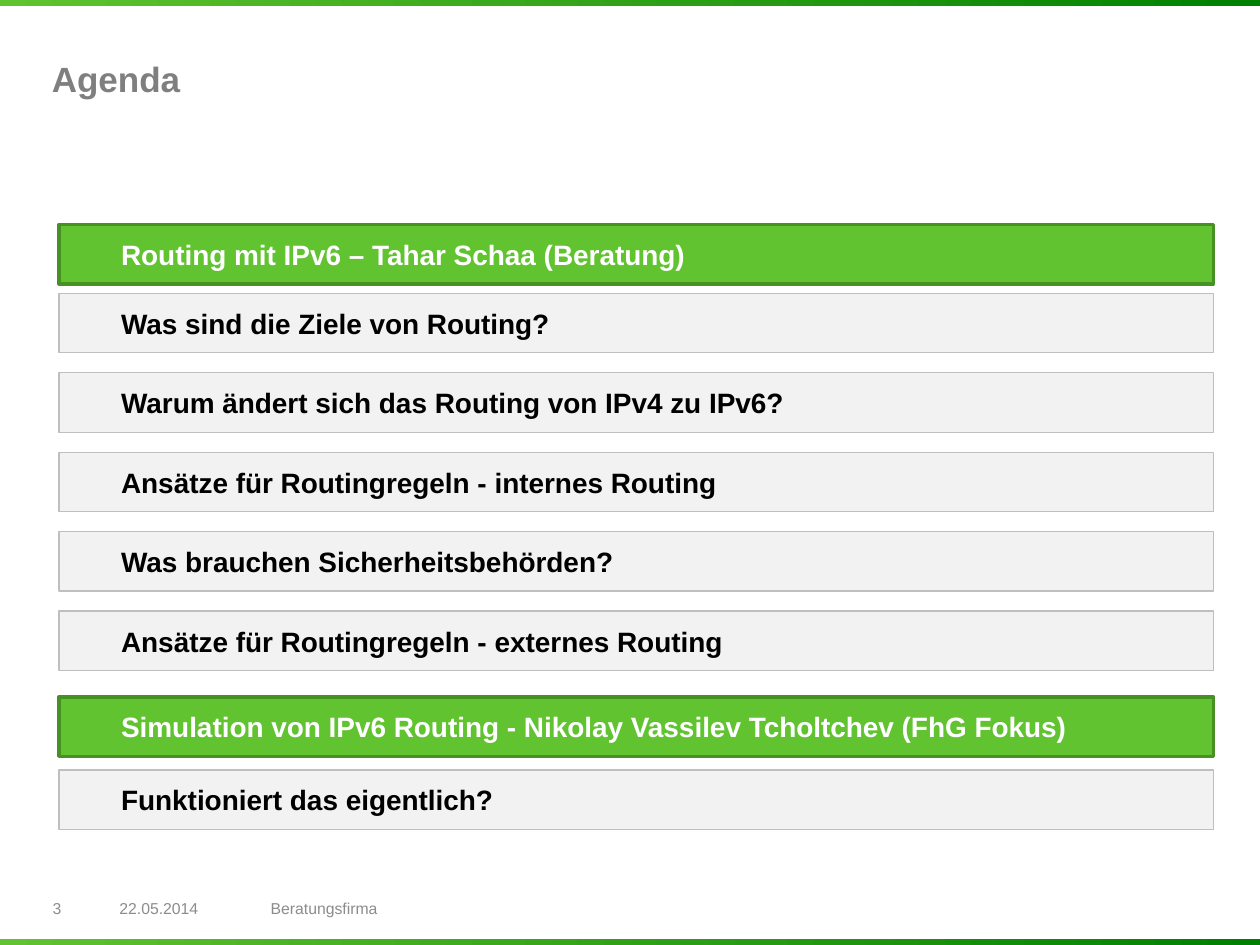
from pptx import Presentation
from pptx.dml.color import RGBColor
from pptx.enum.shapes import MSO_SHAPE
from pptx.enum.text import MSO_ANCHOR, MSO_AUTO_SIZE, PP_ALIGN
from pptx.util import Pt

RECTANGLE = MSO_SHAPE.RECTANGLE
TOP, MIDDLE = MSO_ANCHOR.TOP, MSO_ANCHOR.MIDDLE
LEFT = PP_ALIGN.LEFT
NO_AUTOFIT = MSO_AUTO_SIZE.NONE

GREEN = RGBColor(0x60, 0xC3, 0x2F)
DARK_GREEN = RGBColor(0x00, 0x80, 0x00)
EDGE_GREEN = RGBColor(0x47, 0x90, 0x23)
PALE_GREY = RGBColor(0xF2, 0xF2, 0xF2)
EDGE_GREY = RGBColor(0xBF, 0xBF, 0xBF)
TITLE_GREY = RGBColor(0x7F, 0x7F, 0x7F)
FOOTER_GREY = RGBColor(0x8C, 0x8C, 0x8C)
BLACK = RGBColor(0x00, 0x00, 0x00)
WHITE = RGBColor(0xFF, 0xFF, 0xFF)

FONT = "Arial"
SLIDE_WIDTH, SLIDE_HEIGHT = 720, 540
BAND_HEIGHT = 3.6

TITLE = "Agenda"
SECTIONS = [
    (128.2, "Routing mit IPv6 – Tahar Schaa (Beratung)", 167.6, [
        "Was sind die Ziele von Routing?",
        "Warum ändert sich das Routing von IPv4 zu IPv6?",
        "Ansätze für Routingregeln - internes Routing",
        "Was brauchen Sicherheitsbehörden?",
        "Ansätze für Routingregeln - externes Routing",
    ]),
    (398.2, "Simulation von IPv6 Routing - Nikolay Vassilev Tcholtchev (FhG Fokus)", 440, [
        "Funktioniert das eigentlich?",
    ]),
]
FOOTER = [
    (23, 38, "3"),
    (61.2, 86, "22.05.2014"),
    (147.6, 352, "Beratungsfirma"),
]

BAR_LEFT, BAR_WIDTH, BAR_HEIGHT, BAR_STEP = 33.8, 659.6, 34, 45.4
BAR_INDENT = 35.4
HEADING_STYLE = (GREEN, EDGE_GREEN, 2, WHITE)
TOPIC_STYLE = (PALE_GREY, EDGE_GREY, 0.75, BLACK)


def write(shape, text, size, color, bold=False, anchor=MIDDLE):
    frame = shape.text_frame
    frame.word_wrap = True
    frame.auto_size = NO_AUTOFIT
    frame.vertical_anchor = anchor
    paragraph = frame.paragraphs[0]
    paragraph.alignment = LEFT
    run = paragraph.add_run()
    run.text = text
    run.font.name = FONT
    run.font.size = Pt(size)
    run.font.bold = bold
    run.font.color.rgb = color


def add_rectangle(slide, left, top, width, height):
    rectangle = slide.shapes.add_shape(
        RECTANGLE, Pt(left), Pt(top), Pt(width), Pt(height))
    rectangle.shadow.inherit = False
    return rectangle


def add_band(slide, top):
    band = add_rectangle(slide, 0, top, SLIDE_WIDTH, BAND_HEIGHT)
    band.line.fill.background()
    band.fill.gradient()
    band.fill.gradient_angle = 0
    for stop, color, position in zip(
            band.fill.gradient_stops, (GREEN, DARK_GREEN), (0, 1)):
        stop.color.rgb = color
        stop.position = position


def add_bar(slide, top, text, style):
    fill, edge, edge_width, text_color = style
    bar = add_rectangle(slide, BAR_LEFT, top, BAR_WIDTH, BAR_HEIGHT)
    bar.fill.solid()
    bar.fill.fore_color.rgb = fill
    bar.line.color.rgb = edge
    bar.line.width = Pt(edge_width)
    bar.text_frame.margin_left = Pt(BAR_INDENT)
    write(bar, text, 16, text_color, bold=True)


def main():
    agenda = Presentation()
    agenda.slide_width, agenda.slide_height = Pt(SLIDE_WIDTH), Pt(SLIDE_HEIGHT)
    slide = agenda.slides.add_slide(agenda.slide_layouts[5])

    for top in (0, SLIDE_HEIGHT - BAND_HEIGHT):
        add_band(slide, top)

    title = slide.shapes.title
    title.left, title.top = Pt(22.4), Pt(29)
    title.width, title.height = Pt(668), Pt(62.6)
    write(title, TITLE, 20, TITLE_GREY, bold=True, anchor=TOP)

    for heading_top, heading, topics_top, topics in SECTIONS:
        add_bar(slide, heading_top, heading, HEADING_STYLE)
        for row, topic in enumerate(topics):
            add_bar(slide, topics_top + row * BAR_STEP, topic, TOPIC_STYLE)

    for left, width, text in FOOTER:
        note = slide.shapes.add_textbox(Pt(left), Pt(509), Pt(width), Pt(20))
        write(note, text, 9, FOOTER_GREY)

    agenda.save("out.pptx")


if __name__ == "__main__":
    main()
